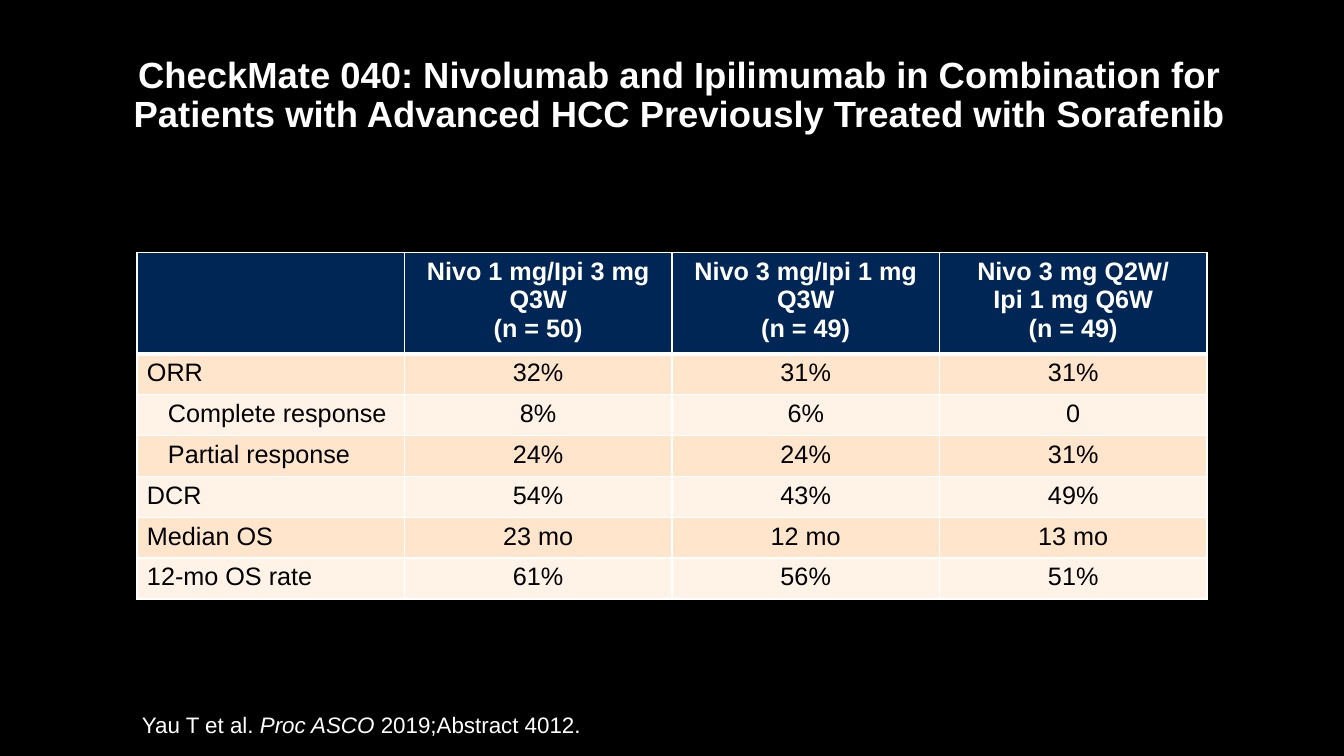
from pptx import Presentation
from pptx.dml.color import RGBColor as RGB
from pptx.enum.text import MSO_ANCHOR as Anchor, PP_ALIGN as Align
from pptx.oxml import parse_xml
from pptx.oxml.ns import nsdecls
from pptx.util import Pt

HUES = {"back": "000000", "light": "FFFFFF", "dark": "000000",
        "head": "002656", "odd": "FFE5CC", "even": "FFF3E7"}

TITLE = ("CheckMate 040: Nivolumab and Ipilimumab in Combination for "
         "Patients with Advanced HCC Previously Treated with Sorafenib")
HEADS = [
    [""],
    ["Nivo 1 mg/Ipi 3 mg", "Q3W", "(n = 50)"],
    ["Nivo 3 mg/Ipi 1 mg", "Q3W", "(n = 49)"],
    ["Nivo 3 mg Q2W/", "Ipi 1 mg Q6W", "(n = 49)"],
]
ROWS = [
    ("ORR", "32%", "31%", "31%"),
    ("Complete response", "8%", "6%", "0"),
    ("Partial response", "24%", "24%", "31%"),
    ("DCR", "54%", "43%", "49%"),
    ("Median OS", "23 mo", "12 mo", "13 mo"),
    ("12-mo OS rate", "61%", "56%", "51%"),
]
NESTED = {"Complete response", "Partial response"}
SOURCE = [("Yau T et al. ", False), ("Proc ASCO ", True),
          ("2019;Abstract 4012.", False)]

HEAD_HIGH = 72
ROW_HIGH = 29.2
INDENT = 15


def color(name):
    return RGB.from_string(HUES[name])


def style(font, hue, **values):
    for key, value in {"name": "Arial", **values}.items():
        setattr(font, key, value)
    font.color.rgb = color(hue)


def add_box(slide, box):
    frame = slide.shapes.add_textbox(*map(Pt, box)).text_frame
    frame.word_wrap = True
    return frame


def add_title(slide, box):
    frame = add_box(slide, box)
    frame.vertical_anchor = Anchor.MIDDLE
    para = frame.paragraphs[0]
    para.text = TITLE
    for key, value in {"alignment": Align.CENTER, "line_spacing": 0.9,
                       "space_after": Pt(8)}.items():
        setattr(para, key, value)
    style(para.runs[0].font, "light", size=Pt(26), bold=True)


def add_source(slide, box):
    para = add_box(slide, box).paragraphs[0]
    for text, slant in SOURCE:
        run = para.add_run()
        run.text = text
        style(run.font, "light", size=Pt(16), italic=slant)


def edge(cell, **widths):
    for side, width in widths.items():
        cell._tc.get_or_add_tcPr().append(parse_xml(
            f'<a:ln{side} {nsdecls("a")} w="{Pt(width)}"><a:solidFill>'
            f'<a:srgbClr val="{HUES["light"]}"/></a:solidFill></a:ln{side}>'))


def fill_cell(cell, lines, row, col):
    head = row == 0
    edge(cell, L=1, R=1, T=3 if row == 1 else 1, B=3 if head else 1)
    cell.fill.solid()
    cell.fill.fore_color.rgb = color(
        "head" if head else "odd" if row % 2 else "even")
    if lines[0] in NESTED:
        cell.margin_left = Pt(7.2 + INDENT)
    cell.text = "\n".join(lines)
    for para in cell.text_frame.paragraphs:
        para.alignment = Align.CENTER if col else Align.LEFT
        style(para.font, "light" if head else "dark", size=Pt(18), bold=head)
        for run in para.runs:
            style(run.font, "light" if head else "dark",
                  size=Pt(18), bold=head)


def add_grid(slide, box):
    rows = [HEADS] + [[[text] for text in row] for row in ROWS]
    grid = slide.shapes.add_table(
        len(rows), len(HEADS), *map(Pt, box)).table
    for col in grid.columns:
        col.width = Pt(box[2] / len(HEADS))
    for i, row in enumerate(rows):
        grid.rows[i].height = Pt(ROW_HIGH if i else HEAD_HIGH)
        for j, lines in enumerate(row):
            fill_cell(grid.cell(i, j), lines, i, j)


def main():
    deck = Presentation()
    deck.slide_width, deck.slide_height = Pt(960), Pt(540)
    slide = deck.slides.add_slide(deck.slide_layouts[6])
    slide.background.fill.solid()
    slide.background.fill.fore_color.rgb = color("back")
    add_title(slide, (77.8, 41.8, 815.8, 54))
    add_grid(slide, (97.8, 180.6, 764.4, HEAD_HIGH + ROW_HIGH * len(ROWS)))
    add_source(slide, (94.3, 504.7, 332, 26.6))
    deck.save("out.pptx")


if __name__ == "__main__":
    main()
